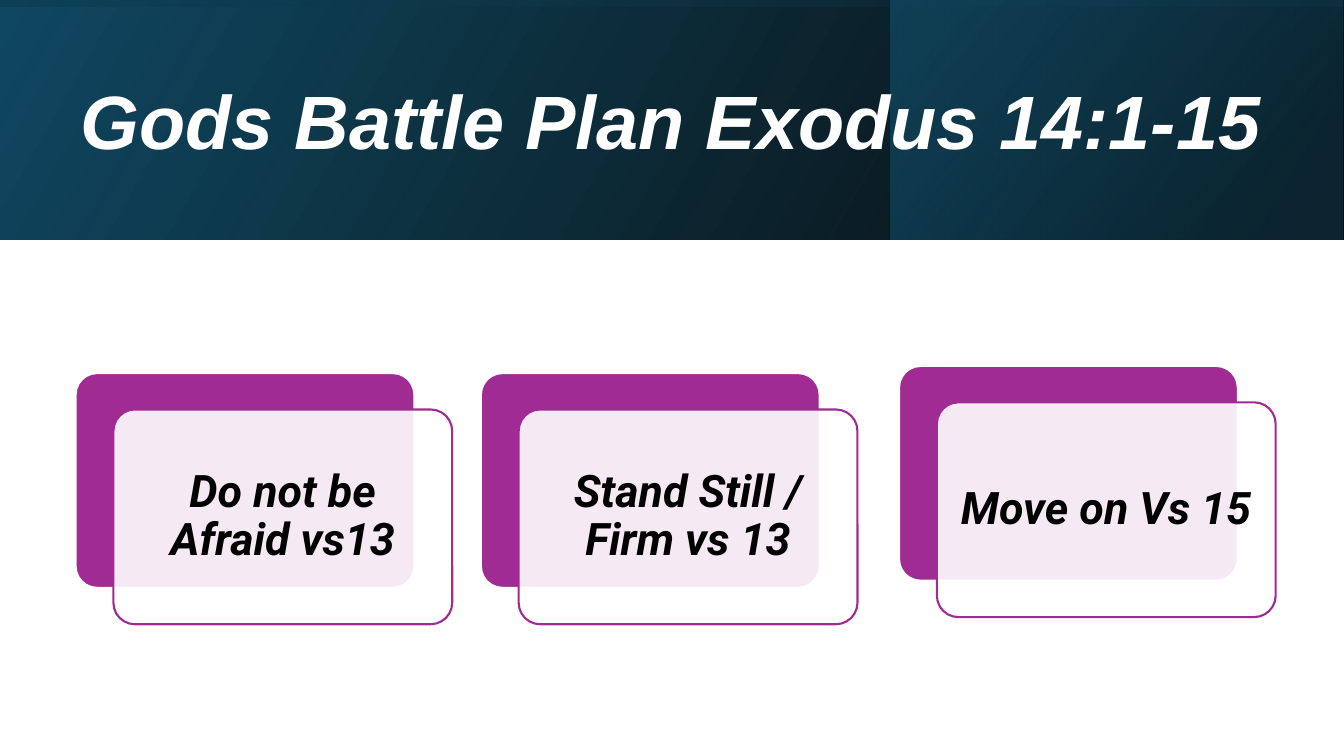
from dataclasses import dataclass

from lxml import etree
from pptx import Presentation
from pptx.dml.color import RGBColor
from pptx.enum import shapes, text
from pptx.oxml.ns import qn
from pptx.util import Pt

COLORS = {
    "white": "FFFFFF",
    "black": "000000",
    "purple": "A02B93",
    "navy": "104862",
    "deep": "0B3041",
    "teal": "156082",
}
CARD_WIDTH, CARD_HEIGHT = 242, 153.4
FRONT_SHIFT_X, FRONT_SHIFT_Y = 27, 26
LABEL_MARGIN = 4.5


@dataclass
class Stop:
    position: float
    color: str
    opacity: int


@dataclass
class Band:
    left: float
    top: float
    width: float
    height: float
    angle: float
    stops: tuple[Stop, Stop]
    rotation: float = 0


@dataclass
class Card:
    left: float
    top: float
    label: str


BANDS = [
    Band(0, 0, 960, 170.8, 30, (Stop(0, "black", 96), Stop(1, "navy", 100))),
    Band(636, 0, 323, 170.8, 40, (Stop(0.19, "deep", 68), Stop(1, "teal", 48))),
    Band(394.6, -394.6, 170.8, 960, 10,
         (Stop(0.23, "navy", 16), Stop(0.99, "black", 45)), rotation=270),
]
CARDS = [
    Card(54, 266.5, "Do not be Afraid vs13"),
    Card(343.5, 266.5, "Stand Still / Firm vs 13"),
    Card(642.2, 261.4, "Move on Vs 15"),
]


def rgb(name: str) -> RGBColor:
    return RGBColor.from_string(COLORS[name])


def set_opacity(color_element, percent: int) -> None:
    alpha = etree.SubElement(color_element, qn("a:alpha"))
    alpha.set("val", str(percent * 1000))


def add_band(page, band: Band) -> None:
    shape = page.shapes.add_shape(
        shapes.MSO_SHAPE.RECTANGLE,
        Pt(band.left), Pt(band.top), Pt(band.width), Pt(band.height))
    shape.shadow.inherit = False
    shape.rotation = band.rotation
    shape.line.fill.background()
    shape.fill.gradient()
    shape.fill.gradient_angle = band.angle
    for target, stop in zip(shape.fill.gradient_stops, band.stops):
        target.position = stop.position
        target.color.rgb = rgb(stop.color)
    properties = shape._element.spPr
    properties.find(qn("a:xfrm")).set("flipH", "1")
    for element, stop in zip(properties.iter(qn("a:srgbClr")), band.stops):
        set_opacity(element, stop.opacity)


def add_panel(group, left: float, top: float, fill: str, line: str, opacity: int = 100) -> None:
    panel = group.shapes.add_shape(
        shapes.MSO_SHAPE.ROUNDED_RECTANGLE,
        Pt(left), Pt(top), Pt(CARD_WIDTH), Pt(CARD_HEIGHT))
    panel.adjustments[0] = 0.1
    panel.shadow.inherit = False
    panel.fill.solid()
    panel.fill.fore_color.rgb = rgb(fill)
    if opacity < 100:
        set_opacity(next(panel._element.spPr.iter(qn("a:srgbClr"))), opacity)
    panel.line.color.rgb = rgb(line)
    panel.line.width = Pt(1.5)


def add_label(parent, left: float, top: float, width: float, height: float, words: str,
              size: float, font: str, color: str, align, inset: float | None = None) -> None:
    box = parent.shapes.add_textbox(Pt(left), Pt(top), Pt(width), Pt(height))
    frame = box.text_frame
    frame.word_wrap = True
    frame.vertical_anchor = text.MSO_ANCHOR.MIDDLE
    if inset is not None:
        frame.margin_left = frame.margin_right = Pt(inset)
        frame.margin_top = frame.margin_bottom = Pt(inset)
    para = frame.paragraphs[0]
    para.alignment = align
    para.line_spacing = 0.9
    span = para.add_run()
    span.text = words
    span.font.name = font
    span.font.size = Pt(size)
    span.font.bold = span.font.italic = True
    span.font.color.rgb = rgb(color)


def add_card(page, card: Card) -> None:
    group = page.shapes.add_group_shape()
    front_left, front_top = card.left + FRONT_SHIFT_X, card.top + FRONT_SHIFT_Y
    add_panel(group, card.left, card.top, "purple", "white")
    add_panel(group, front_left, front_top, "white", "purple", opacity=90)
    add_label(group, front_left + LABEL_MARGIN, front_top + LABEL_MARGIN,
              CARD_WIDTH - 2 * LABEL_MARGIN, CARD_HEIGHT - 2 * LABEL_MARGIN,
              card.label, 32, "Roboto", "black", text.PP_ALIGN.CENTER, inset=9.6)


def main() -> None:
    deck = Presentation()
    deck.slide_width, deck.slide_height = Pt(960), Pt(540)
    page = deck.slides.add_slide(deck.slide_layouts[6])

    # Header background
    for band in BANDS:
        add_band(page, band)

    # Title
    add_label(page, 50.6, 27.4, 870, 123.8, "Gods Battle Plan Exodus 14:1-15",
              54, "Arial", "white", text.PP_ALIGN.LEFT)

    # Battle plan steps
    for card in CARDS:
        add_card(page, card)

    deck.save("out.pptx")


if __name__ == "__main__":
    main()
